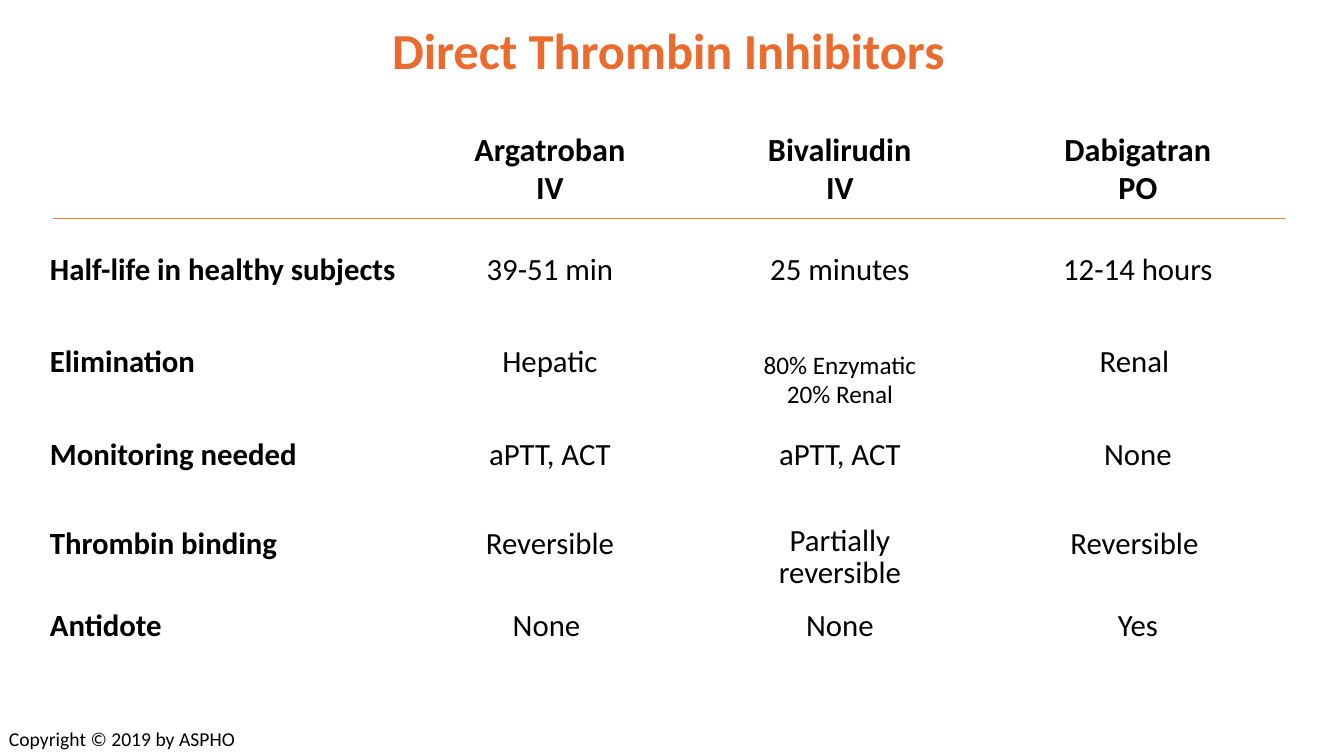
from lxml.etree import SubElement
from pptx import Presentation
from pptx.dml.color import RGBColor
from pptx.enum.shapes import MSO_CONNECTOR
from pptx.enum.text import MSO_ANCHOR, MSO_AUTO_SIZE, PP_ALIGN
from pptx.oxml.ns import qn
from pptx.util import Emu, Pt

WIDTH, HEIGHT = 1344, 756
SCALE = 12192000 / WIDTH
COLUMNS = [372, 282, 298, 298]
ROWS = [
    (120, 23, 0.95, ["", "Argatroban\nIV", "Bivalirudin\nIV", "Dabigatran\nPO"]),
    (81, 22, 0.95, ["Half-life in healthy subjects", "39-51 min", "25 minutes", "12-14 hours"]),
    (103, 22, 0.95, ["Elimination", "Hepatic", "80% Enzymatic\n20% Renal", "Renal "]),
    (81, 22, 0.95, ["Monitoring needed", "aPTT, ACT", "aPTT, ACT", "None"]),
    (99, 22, 0.85, ["Thrombin binding", "Reversible", "Partially\nreversible", "Reversible "]),
    (62, 22, 0.95, ["Antidote", "None ", "None", "Yes"]),
]
LOWERED = {(2, 2): (18, 41), (4, 2): (22, 31)}


def px(n):
    """Turn pixels into EMU."""
    return Emu(round(n * SCALE))


def color(value):
    """Turn a hex string into a colour."""
    return RGBColor.from_string(value)


def format_text(tf, size, value, bold=False, align=PP_ALIGN.LEFT, spacing=None):
    """Format every paragraph and run of a text frame."""
    for p in tf.paragraphs:
        p.alignment = align
        p.line_spacing = spacing
        for r in p.runs:
            r.font.name = "Calibri"
            r.font.size = Pt(size)
            r.font.bold = bold
            r.font.color.rgb = color(value)


def add_title(s, x, y, w, h):
    """Fill and place the title placeholder."""
    sp = s.shapes.title
    sp.left, sp.top, sp.width, sp.height = px(x), px(y), px(w), px(h)
    tf = sp.text_frame
    tf.text = "Direct Thrombin Inhibitors"
    tf.auto_size = MSO_AUTO_SIZE.NONE
    tf.vertical_anchor = MSO_ANCHOR.BOTTOM
    format_text(tf, 36, "EB6B2E", True, PP_ALIGN.CENTER)


def add_comparison(s, x, y):
    """Add the drug comparison table and the rule under its header."""
    w, h = sum(COLUMNS), sum(row[0] for row in ROWS)
    table = s.shapes.add_table(len(ROWS), len(COLUMNS), px(x), px(y), px(w), px(h)).table
    table.first_row = table.horz_banding = False
    for column, width in zip(table.columns, COLUMNS):
        column.width = px(width)
    for i, (height, row_size, spacing, texts) in enumerate(ROWS):
        table.rows[i].height = px(height)
        for j, text in enumerate(texts):
            size, top = LOWERED.get((i, j), (row_size, 5))
            cell = table.cell(i, j)
            cell.fill.background()
            cell.vertical_anchor = MSO_ANCHOR.MIDDLE
            cell.margin_left = cell.margin_right = px(13)
            cell.margin_top, cell.margin_bottom = px(top), px(5)
            cell.text_frame.text = text
            align = PP_ALIGN.CENTER if j else PP_ALIGN.LEFT
            format_text(cell.text_frame, size, "000000", i == 0 or j == 0, align, spacing)
    rule_y = px(y + 109)
    rule = s.shapes.add_connector(MSO_CONNECTOR.STRAIGHT, px(x + 16), rule_y, px(x + w - 2), rule_y)
    rule.line.color.rgb = color("ED7D31")
    rule.line.width = Pt(0.5)
    SubElement(rule._element.spPr, qn("a:effectLst"))


def add_copyright(s, x, y, w, h):
    """Add the copyright line."""
    tf = s.shapes.add_textbox(px(x), px(y), px(w), px(h)).text_frame
    tf.word_wrap = True
    tf.text = "Copyright © 2019 by ASPHO"
    format_text(tf, 14, "000000")


def main():
    """Build the slide and save it."""
    prs = Presentation()
    prs.slide_width, prs.slide_height = px(WIDTH), px(HEIGHT)
    s = prs.slides.add_slide(prs.slide_layouts[5])
    add_title(s, 16, 13, 1305, 72)
    add_comparison(s, 37, 109)
    add_copyright(s, -1, 722, 250, 34)
    prs.save("out.pptx")


if __name__ == "__main__":
    main()
